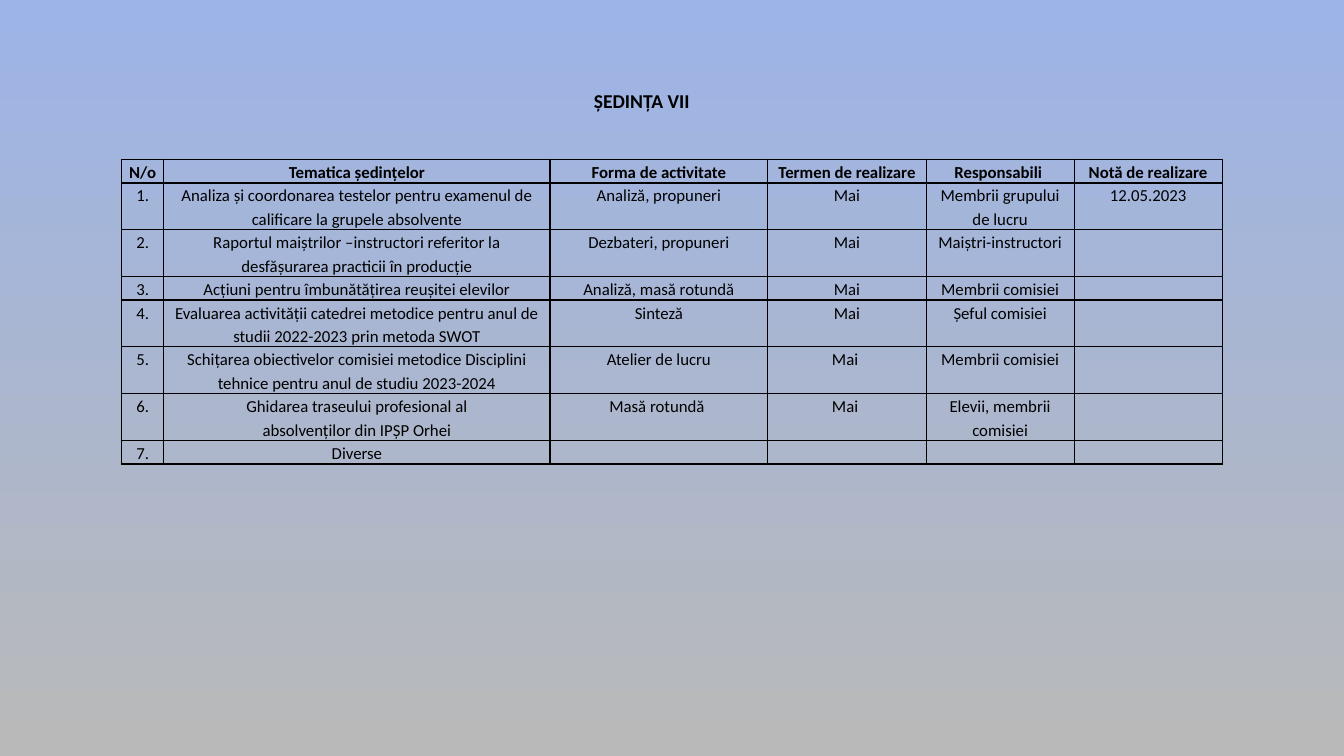
"""Build the agenda slide for session VII of the methodical commission."""
from dataclasses import astuple, dataclass

from lxml import etree
from pptx import Presentation
from pptx import util as u
from pptx.dml.color import RGBColor
from pptx.enum import text
from pptx.oxml import ns

COLORS = {"ink": "000000", "sky": "9CB4E7", "stone": "B9B9B9"}
FONT = "Calibri"
COLUMN_WIDTHS = (1.07, 9.73, 5.49, 3.99, 3.73, 3.73)
LINE_HEIGHT = 0.59
CELL_SIZE = 12


@dataclass
class Topic:
    """One row of the agenda."""
    number: str
    theme: str
    activity: str = ""
    deadline: str = ""
    responsible: str = ""
    note: str = ""
    lines: int = 2


AGENDA = [
    Topic("N/o", "Tematica ședințelor", "Forma de activitate", "Termen de realizare",
          "Responsabili ", "Notă de realizare", lines=1),
    Topic("1.", "Analiza și coordonarea testelor pentru examenul de calificare la grupele absolvente",
          "Analiză, propuneri", "Mai", "Membrii grupului de lucru", "12.05.2023"),
    Topic("2.", "Raportul maiștrilor –instructori referitor la desfășurarea practicii în producție",
          "Dezbateri, propuneri", "Mai", "Maiștri-instructori"),
    Topic("3.", "Acțiuni pentru îmbunătățirea reușitei elevilor",
          "Analiză, masă rotundă", "Mai", "Membrii comisiei", lines=1),
    Topic("4.", "Evaluarea activității catedrei metodice pentru anul de studii 2022-2023 prin metoda SWOT",
          "Sinteză", "Mai", "Șeful comisiei"),
    Topic("5.", "Schițarea obiectivelor comisiei metodice Disciplini tehnice pentru anul de studiu 2023-2024",
          "Atelier de lucru", "Mai ", "Membrii comisiei"),
    Topic("6.", "Ghidarea traseului profesional al\nabsolvenților din IPȘP Orhei",
          "Masă rotundă ", "Mai ", "Elevii, membrii comisiei"),
    Topic("7.", "Diverse", lines=1),
]


def color(name: str) -> RGBColor:
    """Return a named colour of the palette."""
    return RGBColor.from_string(COLORS[name])


def format_text(frame, size: int, bold: bool) -> None:
    """Centre every paragraph and style its runs."""
    for paragraph in frame.paragraphs:
        paragraph.alignment = text.PP_ALIGN.CENTER
        for run in paragraph.runs:
            run.font.name = FONT
            run.font.size = u.Pt(size)
            run.font.bold = bold
            run.font.color.rgb = color("ink")


def draw_borders(cell) -> None:
    """Give a cell thin solid lines on all four sides."""
    properties = cell._tc.get_or_add_tcPr()
    for side in ("a:lnL", "a:lnR", "a:lnT", "a:lnB"):
        line = etree.SubElement(properties, ns.qn(side), w=str(u.Pt(1)))
        fill = etree.SubElement(line, ns.qn("a:solidFill"))
        etree.SubElement(fill, ns.qn("a:srgbClr"), val=COLORS["ink"])


def fill_cell(cell, content: str, bold: bool) -> None:
    """Write and format one agenda cell."""
    draw_borders(cell)
    cell.fill.background()
    cell.margin_left = cell.margin_right = u.Cm(0.18)
    cell.margin_top = cell.margin_bottom = u.Cm(0)
    cell.text_frame.text = content
    format_text(cell.text_frame, CELL_SIZE, bold)
    for paragraph in cell.text_frame.paragraphs:
        paragraph.line_spacing = 1.15
        etree.SubElement(paragraph._p, ns.qn("a:endParaRPr"), sz=str(CELL_SIZE * 100))


def paint_background(slide) -> None:
    """Fade the slide from sky at the top to stone at the bottom."""
    fill = slide.background.fill
    fill.gradient()
    fill.gradient_angle = 270
    for stop, name in zip(fill.gradient_stops, ("sky", "stone")):
        stop.color.rgb = color(name)


def add_heading(slide) -> None:
    """Place the session name in the title placeholder."""
    heading = slide.shapes.title
    heading.left, heading.top = u.Cm(-0.76), u.Cm(1.9)
    heading.width, heading.height = u.Cm(33.87), u.Cm(1.27)
    frame = heading.text_frame
    frame.text = "ȘEDINȚA VII"
    frame.word_wrap = False
    frame.auto_size = text.MSO_AUTO_SIZE.SHAPE_TO_FIT_TEXT
    frame.vertical_anchor = text.MSO_ANCHOR.MIDDLE
    format_text(frame, 14, True)


def add_agenda(slide) -> None:
    """Draw the agenda table."""
    height = LINE_HEIGHT * sum(topic.lines for topic in AGENDA)
    agenda = slide.shapes.add_table(
        len(AGENDA), len(COLUMN_WIDTHS), u.Cm(3.06), u.Cm(4.02),
        u.Cm(sum(COLUMN_WIDTHS)), u.Cm(height)).table
    agenda.horz_banding = False
    agenda.first_row = False
    for column, width in zip(agenda.columns, COLUMN_WIDTHS):
        column.width = u.Cm(width)
    for index, (row, topic) in enumerate(zip(agenda.rows, AGENDA)):
        row.height = u.Cm(LINE_HEIGHT * topic.lines)
        for cell, content in zip(row.cells, astuple(topic)):
            fill_cell(cell, content, bold=index == 0)


def main() -> None:
    """Assemble and save the slide."""
    deck = Presentation()
    deck.slide_width, deck.slide_height = u.Cm(33.87), u.Cm(19.05)
    slide = deck.slides.add_slide(deck.slide_layouts[5])
    paint_background(slide)
    add_agenda(slide)
    add_heading(slide)
    deck.save("out.pptx")


if __name__ == "__main__":
    main()
